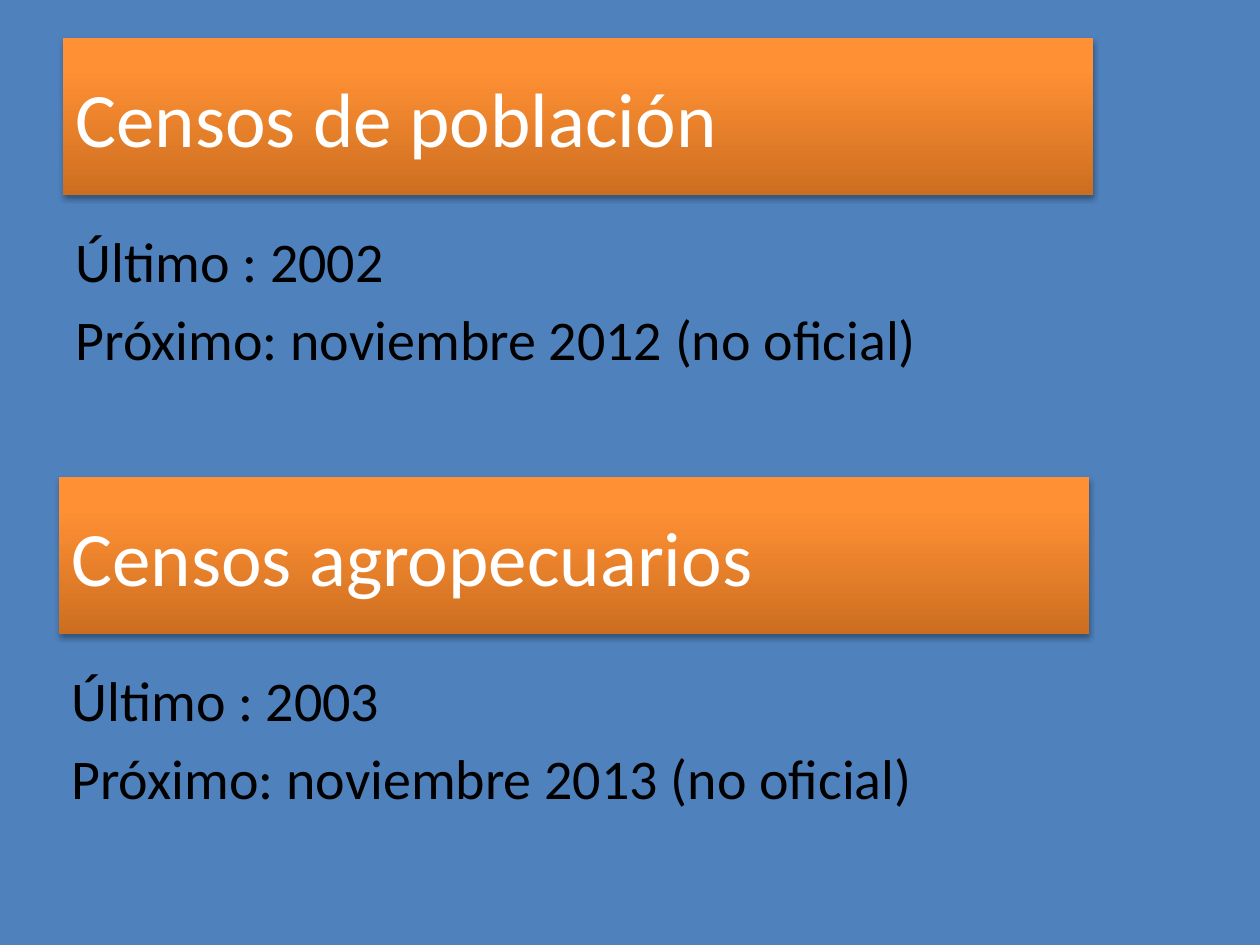
from dataclasses import dataclass

from lxml.etree import SubElement
from pptx import Presentation
from pptx.dml.color import RGBColor
from pptx.enum.shapes import MSO_SHAPE
from pptx.enum.text import MSO_ANCHOR, MSO_AUTO_SIZE, PP_ALIGN
from pptx.oxml.ns import qn
from pptx.util import Emu, Pt


@dataclass(frozen=True)
class Theme:
    font: str = "Calibri"
    background: str = "4F81BD"
    heading_color: str = "FFFFFF"
    body_color: str = "000000"
    shadow_color: str = "000000"
    gradient: tuple = ((0, "CC6E20"), (80, "FF9034"), (100, "FF9136"))
    heading_size: int = 44
    body_size: int = 32


THEME = Theme()
PX_PER_INCH = 126
HEADING_WIDTH, HEADING_HEIGHT = 1030, 157
BODY_WIDTH, BODY_HEIGHT = 1134, 193
BODY_OFFSET = 182
HANGING_INDENT = 78


def px(length):
    return Emu(round(length * 914400 / PX_PER_INCH))


def place(shape, left, top, width, height):
    shape.left, shape.top = px(left), px(top)
    shape.width, shape.height = px(width), px(height)


def format_runs(paragraph, size, color):
    for run in paragraph.runs:
        run.font.name = THEME.font
        run.font.size = Pt(size)
        run.font.color.rgb = RGBColor.from_string(color)


def add_color(parent, color):
    return SubElement(parent, qn("a:srgbClr"), val=color)


def style_banner(shape):
    """Give the shape an orange gradient, no outline and a soft shadow below."""
    shape.fill.gradient()
    shape.fill.gradient_angle = 90
    properties = shape.element.spPr
    stops = properties.find(f".//{qn('a:gsLst')}")
    for stop in list(stops):
        stops.remove(stop)
    for position, color in THEME.gradient:
        add_color(SubElement(stops, qn("a:gs"), pos=str(position * 1000)), color)

    shape.line.fill.background()
    shape.shadow.inherit = False
    shadow = SubElement(
        properties.find(qn("a:effectLst")), qn("a:outerShdw"),
        blurRad=str(Pt(3.1)), dist=str(Pt(1.8)), dir="5400000", rotWithShape="0",
    )
    SubElement(add_color(shadow, THEME.shadow_color), qn("a:alpha"), val="35000")


def fill_heading(shape, text):
    style_banner(shape)
    text_frame = shape.text_frame
    text_frame.text = text
    text_frame.word_wrap = True
    text_frame.auto_size = MSO_AUTO_SIZE.NONE
    text_frame.vertical_anchor = MSO_ANCHOR.MIDDLE
    paragraph = text_frame.paragraphs[0]
    paragraph.alignment = PP_ALIGN.LEFT
    format_runs(paragraph, THEME.heading_size, THEME.heading_color)


def fill_body(shape, lines):
    text_frame = shape.text_frame
    text_frame.text = "\n".join(lines)
    text_frame.word_wrap = True
    text_frame.auto_size = MSO_AUTO_SIZE.NONE
    for paragraph in text_frame.paragraphs:
        paragraph.space_before = Pt(THEME.body_size * 0.2)
        properties = paragraph._p.get_or_add_pPr()
        properties.set("marL", str(px(HANGING_INDENT)))
        properties.set("indent", str(-px(HANGING_INDENT)))
        SubElement(properties, qn("a:buNone"))
        format_runs(paragraph, THEME.body_size, THEME.body_color)


def build_census(heading, body, left, top, title, lines):
    place(heading, left, top, HEADING_WIDTH, HEADING_HEIGHT)
    place(body, left, top + BODY_OFFSET, BODY_WIDTH, BODY_HEIGHT)
    fill_heading(heading, title)
    fill_body(body, lines)


def main():
    presentation = Presentation()
    presentation.slide_width, presentation.slide_height = px(1260), px(945)
    slide = presentation.slides.add_slide(presentation.slide_layouts[1])
    background = slide.background.fill
    background.solid()
    background.fore_color.rgb = RGBColor.from_string(THEME.background)

    shapes = slide.shapes
    build_census(
        shapes.title, slide.placeholders[1], 63, 38, "Censos de población",
        ["Último : 2002", "Próximo: noviembre 2012 (no oficial)"],
    )
    build_census(
        shapes.add_shape(MSO_SHAPE.RECTANGLE, 0, 0, 0, 0),
        shapes.add_textbox(0, 0, 0, 0), 59, 477, "Censos agropecuarios",
        ["Último : 2003", "Próximo: noviembre 2013 (no oficial)"],
    )
    presentation.save("out.pptx")


if __name__ == "__main__":
    main()
